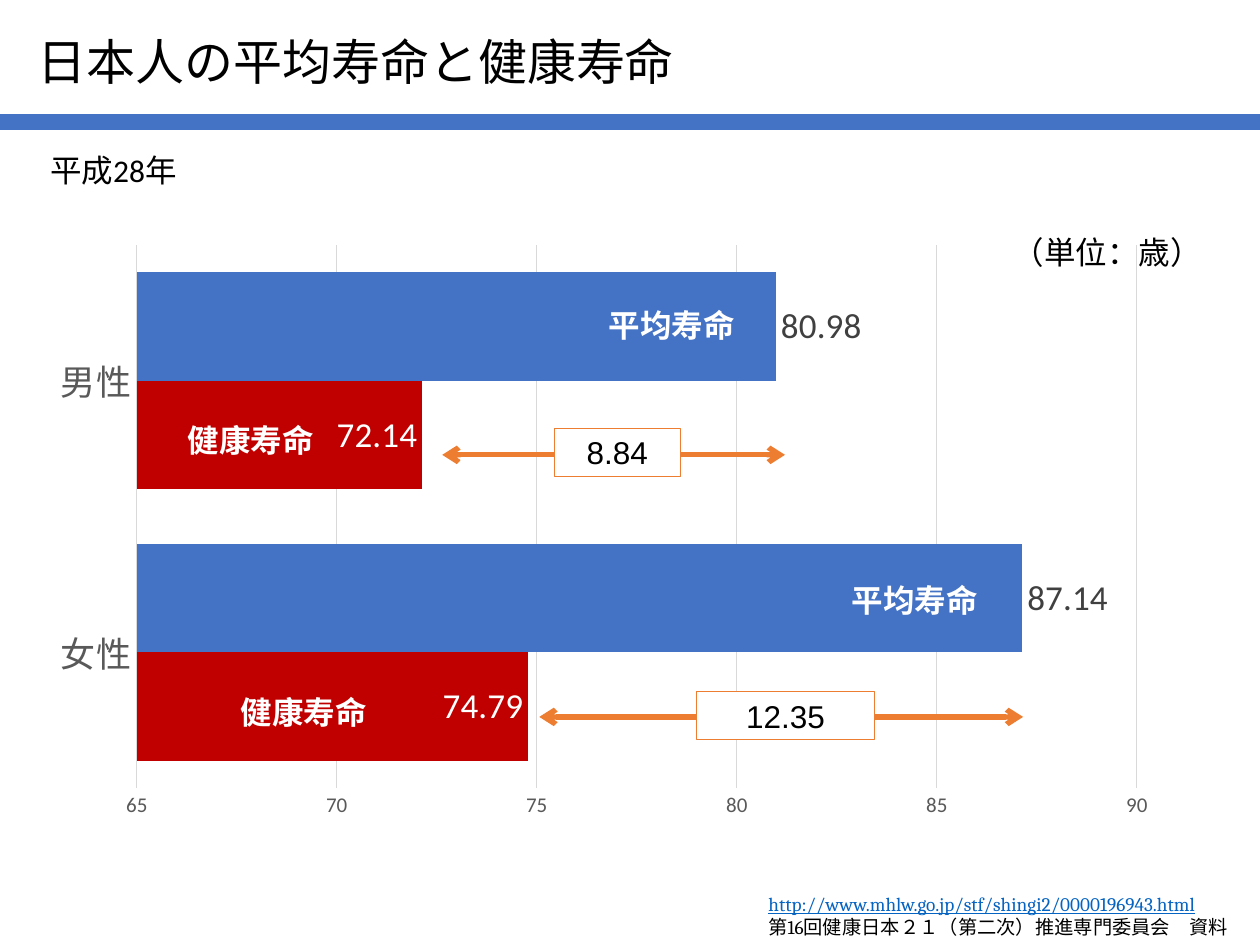
from dataclasses import dataclass

from lxml import etree
from pptx import Presentation
from pptx import util as u
from pptx.chart.data import CategoryChartData
from pptx.dml.color import RGBColor
from pptx.enum import chart as ch
from pptx.enum import shapes, text
from pptx.oxml import parse_xml
from pptx.oxml.ns import nsdecls, qn

COLORS = {
    "blue": "4472C4", "red": "C00000", "orange": "ED7D31", "link": "0563C1",
    "black": "000000", "white": "FFFFFF", "axis": "595959", "grid": "D9D9D9",
    "value": "404040",
}
ALIGN = text.PP_ALIGN


@dataclass
class Label:
    words: str
    left: float
    top: float
    width: float
    height: float = 0.4
    color: str = "black"
    bold: bool = False
    align: text.PP_ALIGN = ALIGN.LEFT


@dataclass
class Gap:
    years: str
    start: float
    end: float
    line_y: float
    box_left: float
    box_top: float
    box_width: float


LABELS = [
    Label("（単位：歳）", 7.94, 1.8, 1.73),
    Label("平成28年", 0.3, 1.15, 1.33),
    Label("健康寿命", 1.35, 3.29, 1.24, color="white", bold=True, align=ALIGN.RIGHT),
    Label("健康寿命", 1.77, 5.45, 1.24, color="white", bold=True, align=ALIGN.RIGHT),
    Label("平均寿命", 4.66, 2.38, 1.34, color="white", bold=True, align=ALIGN.CENTER),
    Label("平均寿命", 6.59, 4.56, 1.34, color="white", bold=True, align=ALIGN.CENTER),
]
GAPS = [
    Gap("12.35", 4.28, 8.12, 5.69, 5.53, 5.49, 1.41),
    Gap("8.84", 3.51, 6.23, 3.61, 4.4, 3.4, 1),
]


def rgb(name: str) -> RGBColor:
    return RGBColor.from_string(COLORS[name])


def set_font(font, size: float, color: str, face: str = "Calibri") -> None:
    font.size, font.name = u.Pt(size), face
    font.color.rgb = rgb(color)


def inches(*lengths: float) -> list:
    return [u.Inches(length) for length in lengths]


def add_label(slide, label: Label) -> None:
    box = slide.shapes.add_textbox(*inches(label.left, label.top, label.width, label.height))
    box.text_frame.word_wrap = False
    box.text_frame.auto_size = text.MSO_AUTO_SIZE.SHAPE_TO_FIT_TEXT
    paragraph = box.text_frame.paragraphs[0]
    paragraph.text, paragraph.alignment = label.words, label.align
    set_font(paragraph.font, 18, label.color)
    paragraph.font.bold = label.bold


def add_line(parent, start: float, end: float, y: float, color: str, width: float):
    line = parent.add_connector(shapes.MSO_CONNECTOR.STRAIGHT, *inches(start, y, end, y))
    line.line.color.rgb = rgb(color)
    line.line.width = u.Pt(width)
    etree.SubElement(line._element.spPr, qn("a:effectLst"))
    return line


def add_gap(slide, gap: Gap) -> None:
    group = slide.shapes.add_group_shape().shapes
    arrow = add_line(group, gap.start, gap.end, gap.line_y, "orange", 3)
    for end in ("a:headEnd", "a:tailEnd"):
        etree.SubElement(arrow.line._get_or_add_ln(), qn(end), type="arrow")
    box = group.add_shape(
        shapes.MSO_SHAPE.RECTANGLE, *inches(gap.box_left, gap.box_top, gap.box_width, 0.38))
    box.shadow.inherit = False
    box.fill.solid()
    box.fill.fore_color.rgb = rgb("white")
    box.line.color.rgb = rgb("orange")
    box.line.width = u.Pt(0.75)
    frame = box.text_frame
    frame.margin_left = frame.margin_right = u.Inches(0.07)
    frame.margin_top = frame.margin_bottom = u.Inches(0.04)
    paragraph = frame.paragraphs[0]
    paragraph.text, paragraph.alignment = gap.years, ALIGN.CENTER
    set_font(paragraph.font, 18, "black", "Arial")


def add_title(slide) -> None:
    title = slide.shapes.title
    title.left, title.top, title.width, title.height = inches(0.2, 0.2, 5.61, 0.57)
    title.text_frame.word_wrap = True
    title.text_frame.vertical_anchor = text.MSO_ANCHOR.TOP
    paragraph = title.text_frame.paragraphs[0]
    paragraph.text, paragraph.alignment = "日本人の平均寿命と健康寿命", ALIGN.LEFT
    set_font(paragraph.font, 28, "black")


def add_source(slide) -> None:
    frame = slide.shapes.add_textbox(*inches(6, 7.03, 4.14, 0.47)).text_frame
    frame.word_wrap = True
    frame.auto_size = text.MSO_AUTO_SIZE.SHAPE_TO_FIT_TEXT
    address, committee = frame.paragraphs[0], frame.add_paragraph()
    address.text = "http://www.mhlw.go.jp/stf/shingi2/0000196943.html"
    committee.text = "第16回健康日本２１（第二次）推進専門委員会　資料"
    for paragraph, color in ((address, "link"), (committee, "black")):
        paragraph.alignment = ALIGN.JUSTIFY
        set_font(paragraph.font, 11, color, "Cambria")
    address.font.underline = True


def add_life_chart(slide) -> None:
    data = CategoryChartData(number_format="0.00")
    data.categories = ["女性", "男性"]
    data.add_series("健康寿命", (74.79, 72.14))
    data.add_series("平均寿命", (87.14, 80.98))
    chart = slide.shapes.add_chart(
        ch.XL_CHART_TYPE.BAR_CLUSTERED, *inches(0.48, 1.94, 8.78, 4.9), data).chart
    chart.has_legend = chart.has_title = False
    set_font(chart.font, 10, "black")

    people, years = chart.category_axis, chart.value_axis
    for axis, size in ((people, 20), (years, 12)):
        axis.major_tick_mark = axis.minor_tick_mark = ch.XL_TICK_MARK.NONE
        set_font(axis.tick_labels.font, size, "axis")
    years.minimum_scale, years.maximum_scale, years.major_unit = 65, 90, 5
    years.tick_labels.number_format = "0"
    years.tick_labels.number_format_is_linked = False
    years.format.line.fill.background()
    years.has_major_gridlines = True
    for line in (people.format.line, years.major_gridlines.format.line):
        line.color.rgb = rgb("grid")
        line.width = u.Pt(0.75)

    plot = chart.plots[0]
    plot.gap_width, plot.overlap, plot.vary_by_categories = 50, 0, False
    position = ch.XL_LABEL_POSITION
    styles = (("red", "white", position.INSIDE_END), ("blue", "value", position.OUTSIDE_END))
    for series, (fill, color, place) in zip(plot.series, styles):
        series.format.fill.solid()
        series.format.fill.fore_color.rgb = rgb(fill)
        series.data_labels.show_value = True
        series.data_labels.position = place
        set_font(series.data_labels.font, 20, color)

    area = chart._chartSpace.chart.plotArea
    for old in area.findall(qn("c:layout")):
        area.remove(old)
    frame = {"x": 0.069, "y": 0, "w": 0.904, "h": 0.88}
    modes = '<c:xMode val="edge"/><c:yMode val="edge"/>'
    sizes = "".join(f'<c:{key} val="{value}"/>' for key, value in frame.items())
    area.insert(0, parse_xml(
        f'<c:layout {nsdecls("c")}><c:manualLayout><c:layoutTarget val="inner"/>'
        f"{modes}{sizes}</c:manualLayout></c:layout>"))


def main() -> None:
    deck = Presentation()
    deck.slide_width, deck.slide_height = inches(10, 7.5)
    slide = deck.slides.add_slide(deck.slide_layouts[5])
    add_title(slide)
    add_line(slide.shapes, 0, 10, 0.97, "blue", 9)
    add_source(slide)
    add_life_chart(slide)
    for label in LABELS:
        add_label(slide, label)
    for gap in GAPS:
        add_gap(slide, gap)
    deck.save("out.pptx")


if __name__ == "__main__":
    main()
